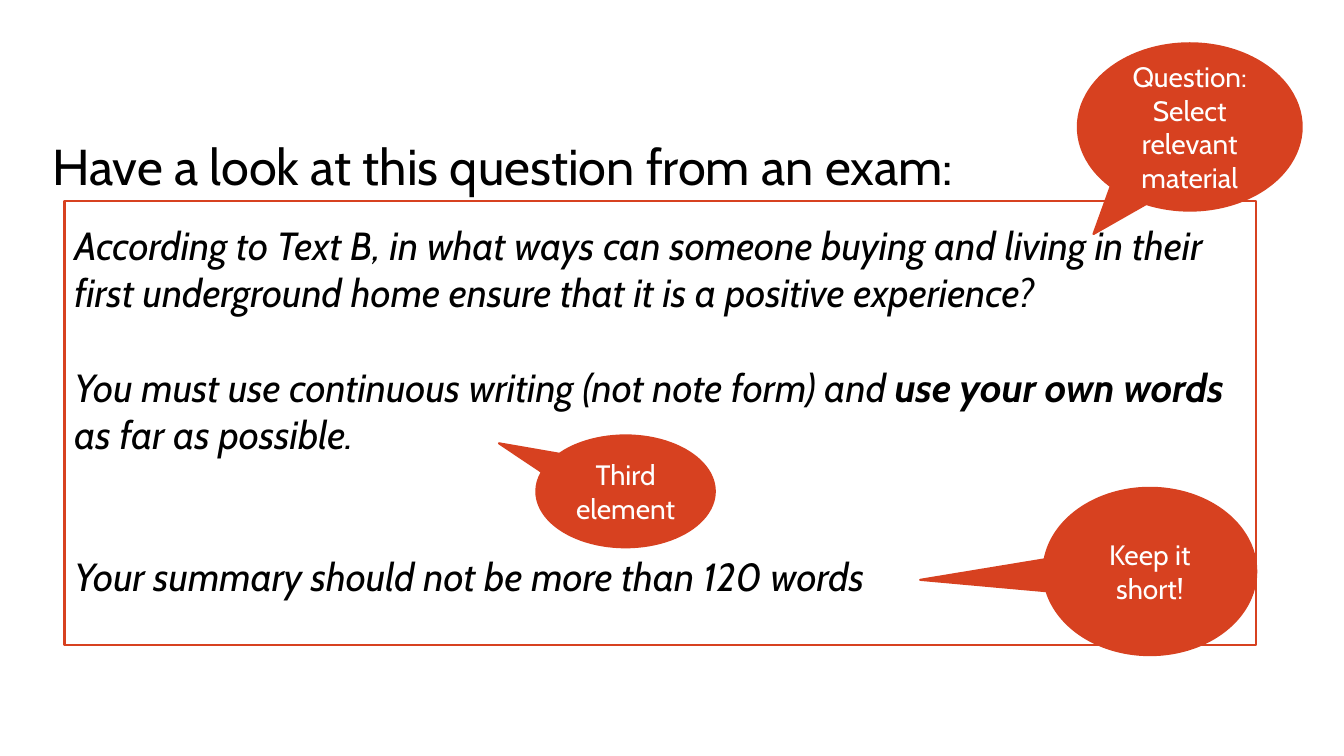
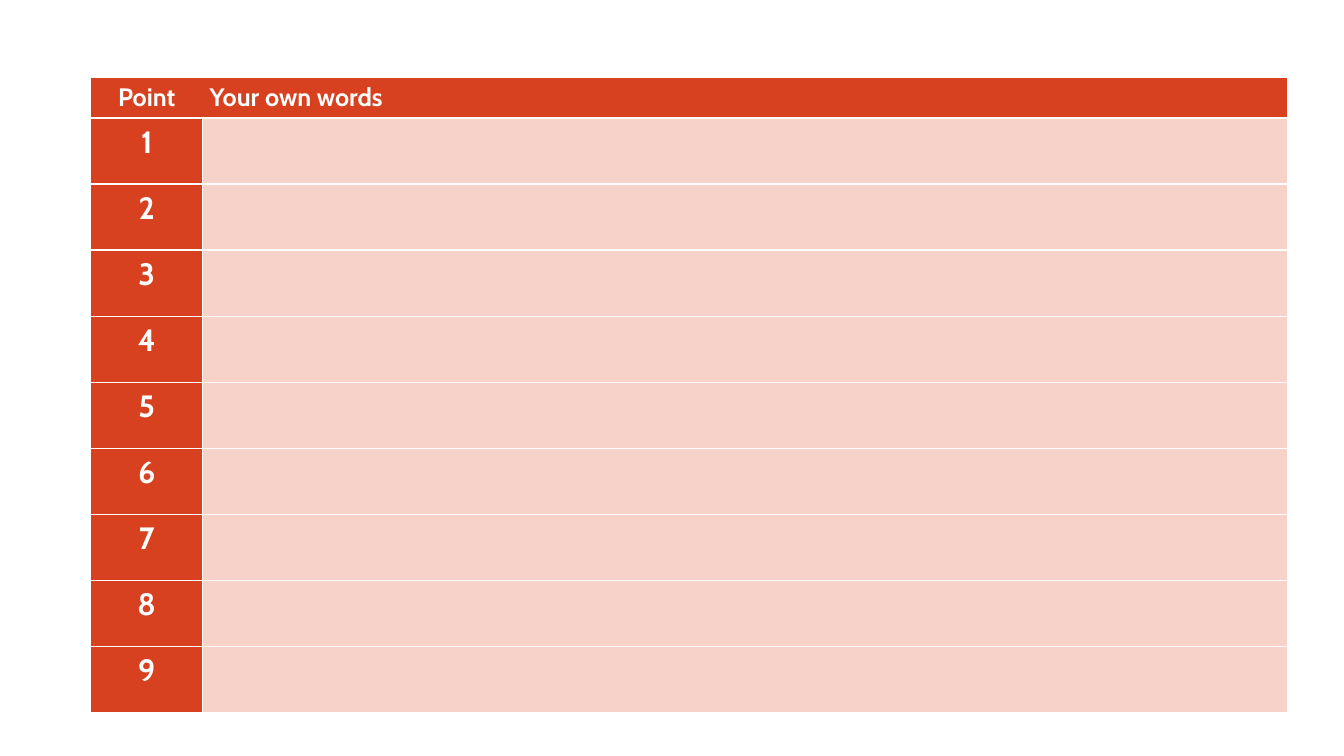
from dataclasses import dataclass

from lxml import etree
from pptx import Presentation
from pptx.dml.color import RGBColor
from pptx.enum.shapes import MSO_SHAPE
from pptx.enum.text import MSO_ANCHOR, MSO_AUTO_SIZE, PP_ALIGN
from pptx.oxml.ns import qn
from pptx.util import Inches, Pt

RECT = MSO_SHAPE.RECTANGLE
BUBBLE = MSO_SHAPE.OVAL_CALLOUT
MIDDLE = MSO_ANCHOR.MIDDLE
LEFT, CENTER = PP_ALIGN.LEFT, PP_ALIGN.CENTER

FONT = "Cabin"
RED, PINK, WHITE, BLACK = "D74120", "F7D2C9", "FFFFFF", "000000"


@dataclass
class Callout:
    text: str
    box: tuple[float, float, float, float]
    tip: tuple[float, float]


@dataclass
class Part:
    runs: list[tuple[str, bool]]
    gap: int = 0


# Question text: runs with a bold flag, and the gap above in points
PARTS = [
    Part([("According to Text B, in what ways can someone buying and living in "
           "their first underground home ensure that it is a positive "
           "experience?", False)]),
    Part([("You must use continuous writing (not note form) and ", False),
          ("use your own words", True), (" as far as possible.", False)], 34),
    Part([("Your summary should not be more than 120 words", False)], 68),
]

CALLOUTS = [
    Callout("Keep it short!", (10.35, 4.84, 2.11, 1.66), (-1.08, 0.05)),
    Callout("Question: Select relevant material",
            (10.69, 0.43, 2.22, 1.66), (-0.43, 0.64)),
    Callout("Third element", (5.32, 4.32, 1.77, 1.11), (-0.71, -0.43)),
]


def color(code: str) -> RGBColor:
    return RGBColor.from_string(code)


def style(font, size: int, code: str, bold=False, italic=False) -> None:
    font.name, font.size = FONT, Pt(size)
    font.bold, font.italic = bold, italic
    font.color.rgb = color(code)


def spread(para, align) -> None:
    """Paragraph setting shared by the title and the table."""
    para.alignment = align
    para.line_spacing = 1.15
    para.space_after = Pt(8)


def add_box(slide, kind, box: tuple, fill: str):
    shape = slide.shapes.add_shape(kind, *map(Inches, box))
    shape.shadow.inherit = False
    shape.fill.solid()
    shape.fill.fore_color.rgb = color(fill)
    shape.line.color.rgb = color(RED)
    shape.line.width = Pt(1.5)
    shape.text_frame.word_wrap = True
    shape.text_frame.vertical_anchor = MIDDLE
    return shape


def add_title(slide, text: str) -> None:
    title = slide.shapes.title
    title.left, title.top = Inches(0.42), Inches(1.2)
    title.width, title.height = Inches(12.72), Inches(0.79)
    frame = title.text_frame
    frame.text = text
    frame.auto_size = MSO_AUTO_SIZE.NONE
    frame.vertical_anchor = MIDDLE
    para = frame.paragraphs[0]
    spread(para, LEFT)
    style(para.runs[0].font, 36, BLACK)


def add_question(slide) -> None:
    frame = add_box(slide, RECT, (0.64, 1.99, 11.82, 4.41), WHITE).text_frame
    frame.margin_bottom = Inches(0.29)
    for i, part in enumerate(PARTS):
        para = frame.add_paragraph() if i else frame.paragraphs[0]
        para.alignment = LEFT
        para.space_before = Pt(part.gap)
        for text, bold in part.runs:
            run = para.add_run()
            run.text = text
            style(run.font, 28, BLACK, bold, italic=True)


def add_callout(slide, note: Callout) -> None:
    shape = add_box(slide, BUBBLE, note.box, RED)
    for i, value in enumerate(note.tip):
        shape.adjustments[i] = value
    shape.text_frame.text = note.text
    para = shape.text_frame.paragraphs[0]
    para.alignment = CENTER
    style(para.runs[0].font, 20, WHITE)


def add_edges(cell, bare: str) -> None:
    """White cell borders, with none on the bare side."""
    props = cell._tc.get_or_add_tcPr()
    for side in "LRTB":
        line = etree.SubElement(props, qn(f"a:ln{side}"), w=str(Pt(1)))
        if side == bare:
            etree.SubElement(line, qn("a:noFill"))
        else:
            fill = etree.SubElement(line, qn("a:solidFill"))
            etree.SubElement(fill, qn("a:srgbClr"), val=WHITE)


def fill_cell(cell, text: str, fill: str, size: int, align, bare: str) -> None:
    add_edges(cell, bare)
    cell.fill.solid()
    cell.fill.fore_color.rgb = color(fill)
    if not text:
        return
    cell.margin_left = cell.margin_right = Inches(0.07)
    cell.margin_top = cell.margin_bottom = 0
    cell.text_frame.text = text
    para = cell.text_frame.paragraphs[0]
    spread(para, align)
    style(para.runs[0].font, size, WHITE, bold=True)


def add_points(slide, count: int) -> None:
    wide, high, head = (1.11, 10.76), 6.3, 0.4
    table = slide.shapes.add_table(
        count + 1, 2, Inches(0.9), Inches(0.77),
        Inches(sum(wide)), Inches(high)).table
    for col, width in zip(table.columns, wide):
        col.width = Inches(width)
    for i, row in enumerate(table.rows):
        row.height = Inches((high - head) / count if i else head)

    # Header row, then one numbered row for each point
    fill_cell(table.cell(0, 0), "Point", RED, 18, CENTER, "R")
    fill_cell(table.cell(0, 1), "Your own words", RED, 18, LEFT, "L")
    for i in range(1, count + 1):
        fill_cell(table.cell(i, 0), str(i), RED, 22, CENTER, "")
        fill_cell(table.cell(i, 1), "", PINK, 22, LEFT, "")


def main() -> None:
    deck = Presentation()
    deck.slide_width, deck.slide_height = Inches(13.33), Inches(7.5)

    # Exam question
    slide = deck.slides.add_slide(deck.slide_layouts[5])
    add_title(slide, "Have a look at this question from an exam:")
    add_question(slide)
    for note in CALLOUTS:
        add_callout(slide, note)

    # Answer table
    slide = deck.slides.add_slide(deck.slide_layouts[6])
    add_points(slide, 9)

    deck.save("out.pptx")


if __name__ == "__main__":
    main()
